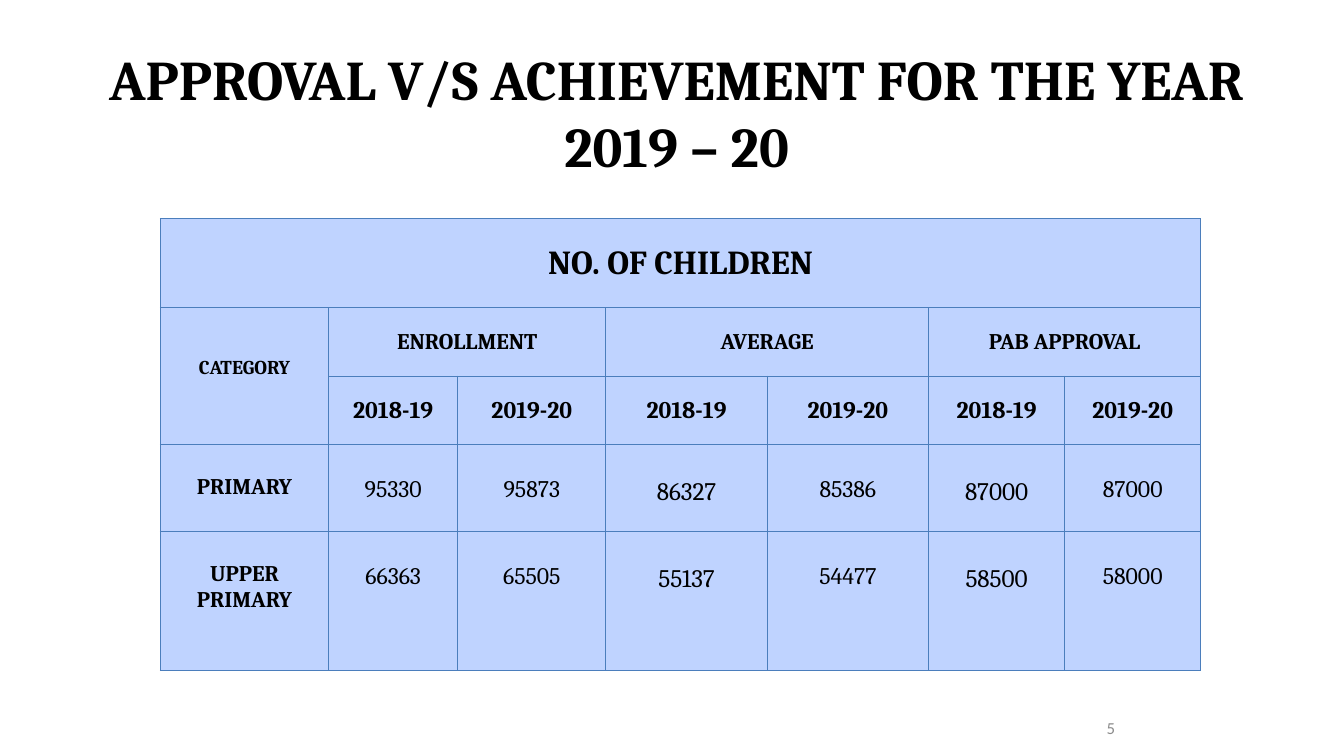
from lxml.etree import SubElement
from pptx import Presentation
from pptx.dml.color import RGBColor
from pptx.enum.text import MSO_ANCHOR, MSO_AUTO_SIZE, PP_ALIGN
from pptx.oxml.ns import qn
from pptx.util import Inches, Pt

COLORS = {"text": "000000", "fill": "BFD3FF", "line": "4B7EBC", "page": "8C8C8C"}
COLS = [1.67, 1.28, 1.47, 1.6, 1.6, 1.35, 1.35]
ROWS = [0.88, 0.68, 0.68, 0.86, 1.38]
GROUPS = ["ENROLLMENT", "AVERAGE", "PAB APPROVAL"]
YEARS = ["2018-19", "2019-20"]
DATA = [
    ("PRIMARY", [95330, 95873, 86327, 85386, 87000, 87000]),
    ("UPPER PRIMARY", [66363, 65505, 55137, 54477, 58500, 58000]),
]
SIZES = [17, 17, 18, 17, 18, 17]  # figures, by column
LINE = 1.17  # line height of the table font, in ems


def style(para, size, bold=False, face="Cambria", color="text", align=PP_ALIGN.CENTER):
    para.alignment = align
    font = para.font
    font.name, font.size, font.bold = face, Pt(size), bold
    font.color.rgb = RGBColor.from_string(COLORS[color])


def frame(cell):
    """Thin border on all sides, then the fill."""
    props = cell._tc.get_or_add_tcPr()
    for side in ("lnL", "lnR", "lnT", "lnB"):
        line = SubElement(props, qn(f"a:{side}"), w=str(Pt(0.75)))
        fill = SubElement(line, qn("a:solidFill"))
        SubElement(fill, qn("a:srgbClr"), val=COLORS["line"])
    cell.fill.solid()
    cell.fill.fore_color.rgb = RGBColor.from_string(COLORS["fill"])


def write(cell, text, size, bold=True, drop=0):
    """Centre the text, or hang it the given number of lines below the top."""
    cell.text = str(text)
    cell.vertical_anchor = MSO_ANCHOR.TOP if drop else MSO_ANCHOR.MIDDLE
    cell.margin_top = Inches(0.04) + Pt(drop * size * LINE)
    cell.margin_bottom = Inches(0.04)
    style(cell.text_frame.paragraphs[0], size, bold)


def add_title(slide, left, top, width, height):
    title = slide.shapes.title
    title.left, title.top = Inches(left), Inches(top)
    title.width, title.height = Inches(width), Inches(height)
    body = title.text_frame
    body.text = "APPROVAL V/S ACHIEVEMENT FOR THE YEAR 2019 – 20"
    body.auto_size = MSO_AUTO_SIZE.NONE
    body.vertical_anchor = MSO_ANCHOR.MIDDLE
    style(body.paragraphs[0], 40, True)


def add_grid(slide, left, top):
    table = slide.shapes.add_table(
        len(ROWS), len(COLS), Inches(left), Inches(top),
        Inches(sum(COLS)), Inches(sum(ROWS))).table
    for col, width in zip(table.columns, COLS):
        col.width = Inches(width)
    for row, height in zip(table.rows, ROWS):
        row.height = Inches(height)
    for cell in table.iter_cells():
        frame(cell)
    # Headings
    table.cell(0, 0).merge(table.cell(0, len(COLS) - 1))
    write(table.cell(0, 0), "NO. OF CHILDREN", 24)
    table.cell(1, 0).merge(table.cell(2, 0))
    write(table.cell(1, 0), "CATEGORY", 14, drop=2)
    for i, group in enumerate(GROUPS):
        first = 1 + i * len(YEARS)
        table.cell(1, first).merge(table.cell(1, first + 1))
        write(table.cell(1, first), group, 16)
        for j, year in enumerate(YEARS):
            write(table.cell(2, first + j), year, 17)
    # Figures
    for r, (name, counts) in enumerate(DATA, 3):
        write(table.cell(r, 0), name, 16, drop=1)
        for c, (count, size) in enumerate(zip(counts, SIZES), 1):
            write(table.cell(r, c), count, size, bold=False, drop=1)


def add_page(slide, left, top, width, height):
    box = slide.shapes.add_textbox(
        Inches(left), Inches(top), Inches(width), Inches(height))
    body = box.text_frame
    body.word_wrap = True
    body.vertical_anchor = MSO_ANCHOR.MIDDLE
    body.text = "5"
    style(body.paragraphs[0], 12, face="Calibri", color="page", align=PP_ALIGN.RIGHT)


def main():
    deck = Presentation()
    deck.slide_width, deck.slide_height = Inches(13.33), Inches(7.5)
    slide = deck.slides.add_slide(deck.slide_layouts[5])
    add_title(slide, 0.92, 0.55, 11.58, 1.11)
    add_grid(slide, 1.59, 2.17)
    add_page(slide, 8.83, 7.02, 2.33, 0.4)
    deck.save("out.pptx")


if __name__ == "__main__":
    main()
